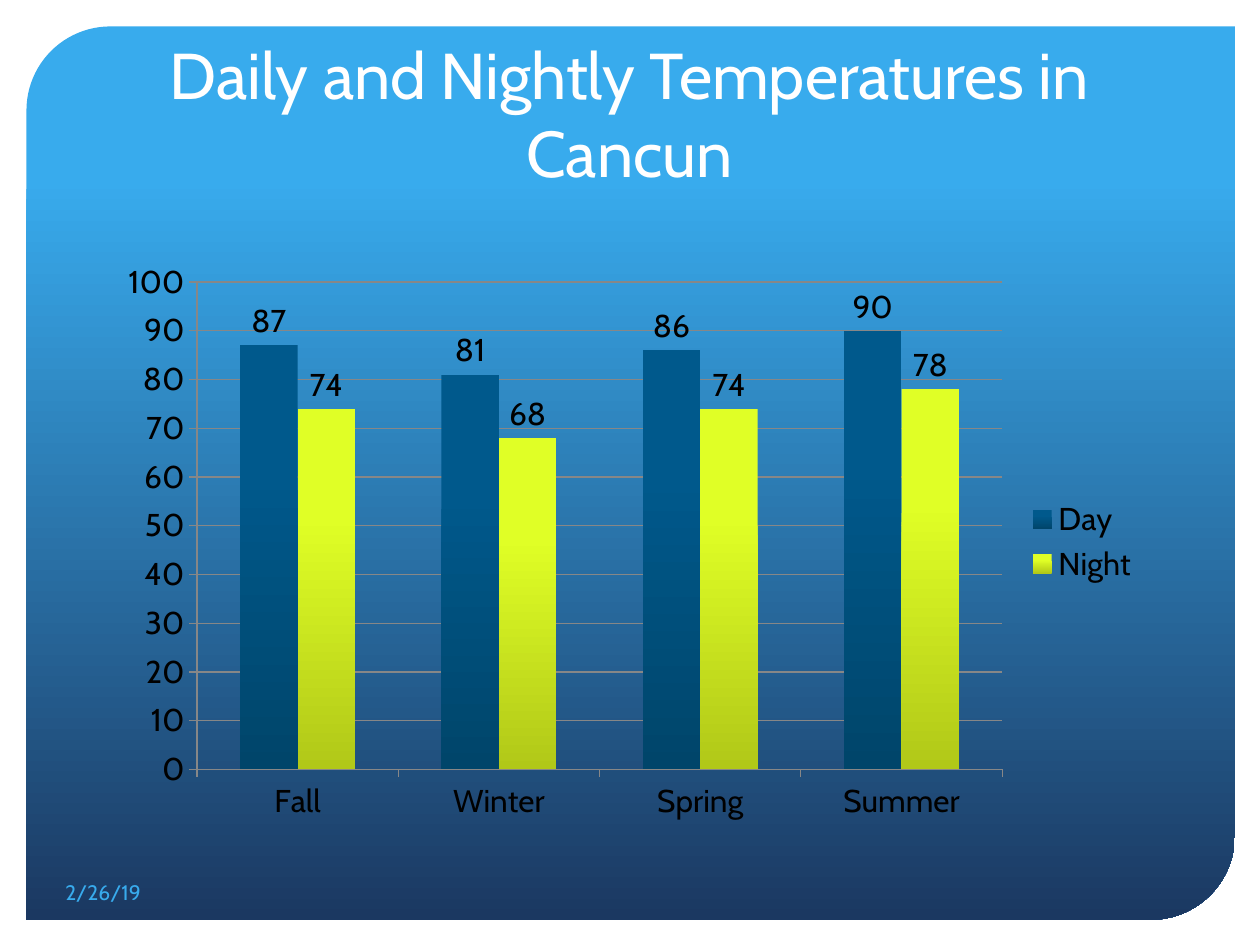
import pptx
import pptx.chart.data
import pptx.dml.color
import pptx.enum.chart
import pptx.enum.shapes
import pptx.enum.text
import pptx.oxml
import pptx.oxml.ns
import pptx.util
from pptx.util import Inches

RGBColor = pptx.dml.color.RGBColor
WHITE = RGBColor(0xFF, 0xFF, 0xFF)
BLACK = RGBColor(0, 0, 0)
SKY = RGBColor(0x38, 0xAB, 0xED)
NAVY = RGBColor(0x1B, 0x38, 0x61)
GRID_GRAY = RGBColor(0x87, 0x87, 0x87)
DAY_TOP = RGBColor(0x00, 0x59, 0x8C)
DAY_BOTTOM = RGBColor(0x00, 0x45, 0x6A)
NIGHT_TOP = RGBColor(0xE0, 0xFF, 0x26)
NIGHT_BOTTOM = RGBColor(0xB1, 0xC8, 0x18)

FONT = "Cabin"
SEASONS = ["Fall", "Winter", "Spring", "Summer"]
TEMPERATURES = {
    "Day": ([87, 81, 86, 90], DAY_TOP, DAY_BOTTOM),
    "Night": ([74, 68, 74, 78], NIGHT_TOP, NIGHT_BOTTOM),
}
PLOT_LAYOUT = {"x": 0.086, "y": 0.052, "w": 0.771, "h": 0.841}


def set_values(target, values):
    for name, value in values.items():
        setattr(target, name, value)


def set_font(font, size, color):
    set_values(font, {"name": FONT, "size": pptx.util.Pt(size), "bold": False})
    font.color.rgb = color


def fill_downward(fill, top, bottom, start):
    fill.gradient()
    fill.gradient_angle = 270
    for stop, color, position in zip(fill.gradient_stops, (top, bottom), (start, 1)):
        stop.color.rgb = color
        stop.position = position


def add_backdrop(slide, box):
    panel = slide.shapes.add_shape(
        pptx.enum.shapes.MSO_SHAPE.ROUND_2_DIAG_RECTANGLE, *box)
    panel.adjustments[0] = 0.094
    panel.adjustments[1] = 0
    panel.shadow.inherit = False
    panel.line.fill.background()
    fill_downward(panel.fill, SKY, NAVY, 0.17)
    slide.shapes.element.insert(2, panel.element)


def write_text(holder, box, text, size, color, anchor, alignment):
    set_values(holder, dict(zip(("left", "top", "width", "height"), box)))
    set_values(holder.text_frame, {
        "text": text,
        "word_wrap": True,
        "vertical_anchor": anchor,
        "auto_size": pptx.enum.text.MSO_AUTO_SIZE.NONE,
    })
    paragraph = holder.text_frame.paragraphs[0]
    paragraph.alignment = alignment
    set_font(paragraph.runs[0].font, size, color)


def place_title(slide, box):
    write_text(slide.shapes.title, box, "Daily and Nightly Temperatures in Cancun",
               37, WHITE, pptx.enum.text.MSO_ANCHOR.BOTTOM,
               pptx.enum.text.PP_ALIGN.CENTER)


def add_date(slide, box):
    write_text(slide.shapes.add_textbox(*box), box, "2/26/19",
               12, SKY, pptx.enum.text.MSO_ANCHOR.MIDDLE,
               pptx.enum.text.PP_ALIGN.LEFT)


def fix_plot_area(chart):
    qn = pptx.oxml.ns.qn
    plot_area = chart.plots[0]._element.getparent()
    for layout in plot_area.findall(qn("c:layout")):
        plot_area.remove(layout)
    modes = '<c:layoutTarget val="inner"/><c:xMode val="edge"/><c:yMode val="edge"/>'
    sizes = "".join(f'<c:{key} val="{value}"/>' for key, value in PLOT_LAYOUT.items())
    plot_area.insert(0, pptx.oxml.parse_xml(
        f'<c:layout {pptx.oxml.ns.nsdecls("c")}>'
        f"<c:manualLayout>{modes}{sizes}</c:manualLayout></c:layout>"))


def add_temperature_chart(slide, box):
    data = pptx.chart.data.CategoryChartData()
    data.categories = SEASONS
    for name, (values, _, _) in TEMPERATURES.items():
        data.add_series(name, values)
    chart = slide.shapes.add_chart(
        pptx.enum.chart.XL_CHART_TYPE.COLUMN_CLUSTERED, *box, data).chart
    set_values(chart, {"has_title": False, "has_legend": True})
    set_font(chart.font, 18, BLACK)
    set_values(chart.legend, {
        "position": pptx.enum.chart.XL_LEGEND_POSITION.RIGHT,
        "include_in_layout": False,
    })
    fix_plot_area(chart)

    for axis in (chart.category_axis, chart.value_axis):
        set_values(axis, {
            "major_tick_mark": pptx.enum.chart.XL_TICK_MARK.OUTSIDE,
            "minor_tick_mark": pptx.enum.chart.XL_TICK_MARK.NONE,
        })
        axis.format.line.color.rgb = GRID_GRAY
    set_values(chart.value_axis, {
        "minimum_scale": 0, "maximum_scale": 100, "major_unit": 10,
        "has_major_gridlines": True,
    })
    chart.value_axis.major_gridlines.format.line.color.rgb = GRID_GRAY

    plot = chart.plots[0]
    set_values(plot, {"gap_width": 150, "overlap": 0, "vary_by_categories": False})
    for series in plot.series:
        _, top, bottom = TEMPERATURES[series.name]
        fill_downward(series.format.fill, top, bottom, 0.3)
        set_values(series.data_labels, {
            "show_value": True,
            "position": pptx.enum.chart.XL_LABEL_POSITION.OUTSIDE_END,
        })
        set_font(series.data_labels.font, 18, BLACK)


def main():
    presentation = pptx.Presentation()
    set_values(presentation, {"slide_width": Inches(10), "slide_height": Inches(7.5)})
    slide = presentation.slides.add_slide(presentation.slide_layouts[5])
    regions = {
        add_backdrop: (0.21, 0.21, 9.59, 7.09),
        place_title: (0.85, 0.42, 8.29, 1.14),
        add_temperature_chart: (0.85, 2, 8.29, 4.6),
        add_date: (0.42, 6.88, 2.06, 0.4),
    }
    for build, box in regions.items():
        build(slide, [Inches(length) for length in box])
    presentation.save("out.pptx")


if __name__ == "__main__":
    main()
